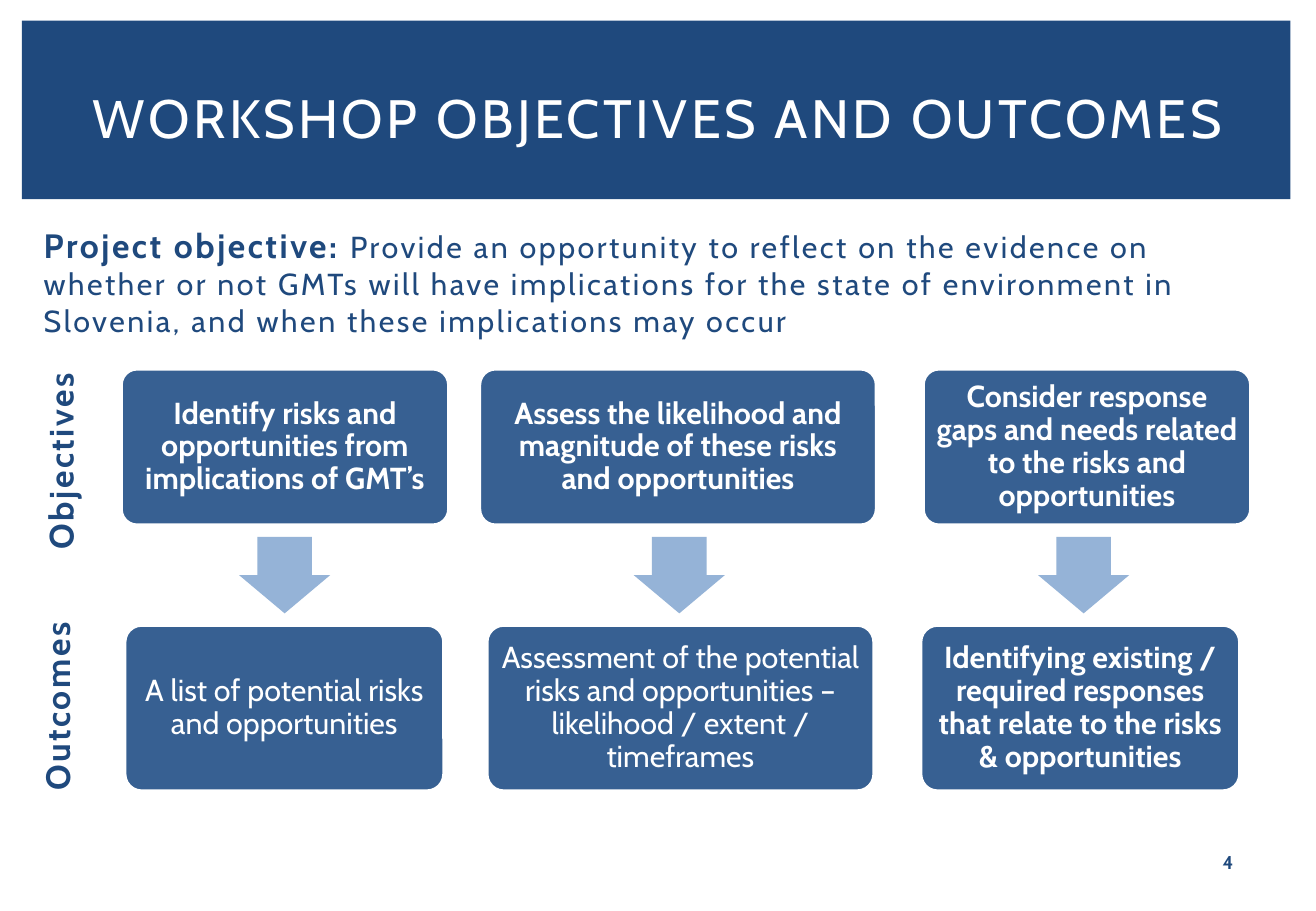
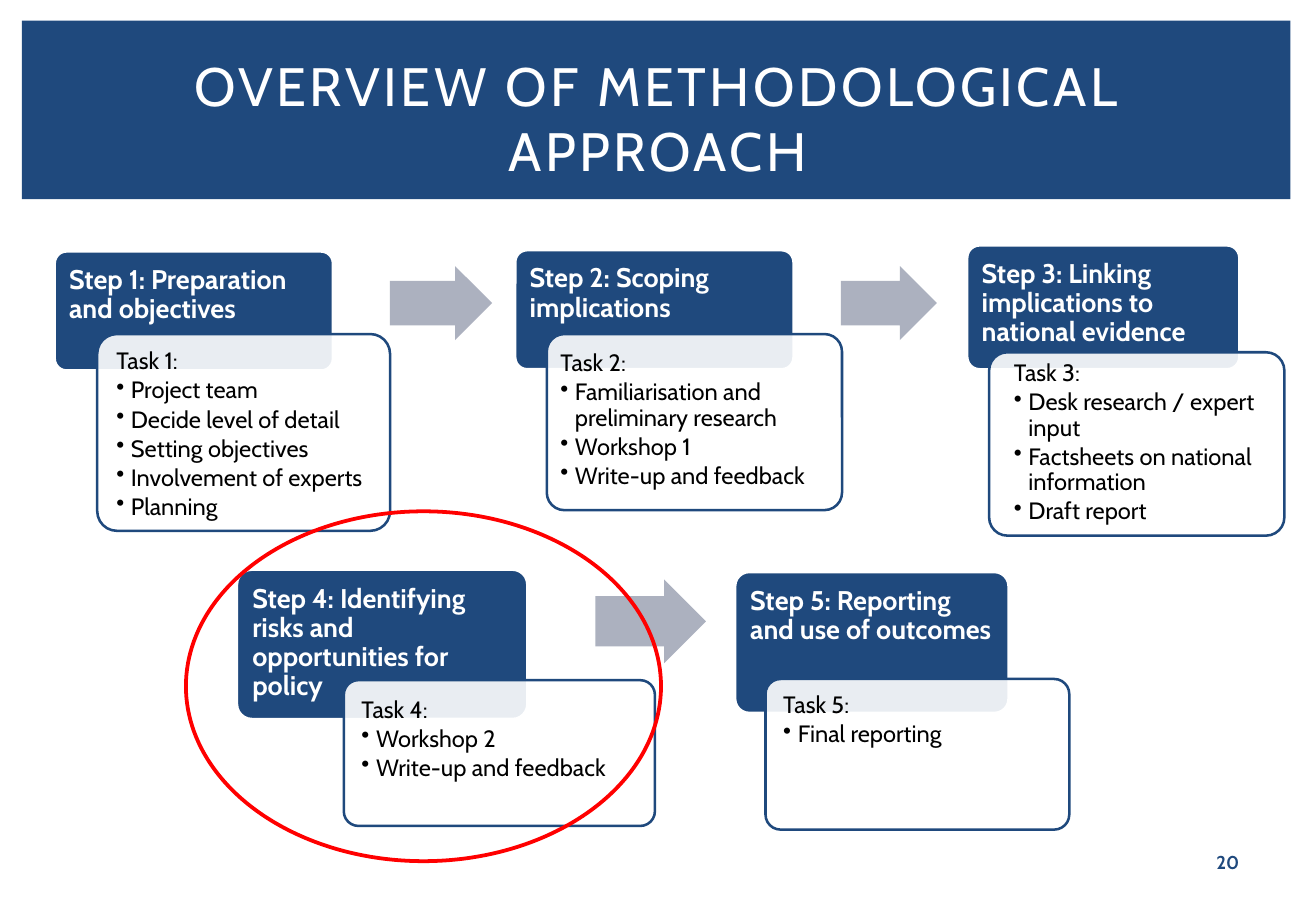
from lxml import etree
from pptx import Presentation
from pptx.dml.color import RGBColor
from pptx.enum.shapes import MSO_SHAPE
from pptx.enum.text import MSO_ANCHOR, MSO_AUTO_SIZE, PP_ALIGN
from pptx.oxml.ns import qn
from pptx.util import Inches, Pt

RECT, ROUNDED = MSO_SHAPE.RECTANGLE, MSO_SHAPE.ROUNDED_RECTANGLE
ARROW, OVAL = MSO_SHAPE.RIGHT_ARROW, MSO_SHAPE.OVAL
LEFT, CENTER = PP_ALIGN.LEFT, PP_ALIGN.CENTER
TOP, MIDDLE = MSO_ANCHOR.TOP, MSO_ANCHOR.MIDDLE

NAVY = RGBColor(0x1F, 0x49, 0x7D)
STEEL = RGBColor(0x37, 0x60, 0x92)
SKY = RGBColor(0x95, 0xB3, 0xD7)
GREY = RGBColor(0xAC, 0xB1, 0xBF)
WHITE = RGBColor(0xFF, 0xFF, 0xFF)
BLACK = RGBColor(0, 0, 0)
RED = RGBColor(0xFF, 0, 0)

FONT = "Cabin"
TITLE_STYLE = {"size": Pt(32), "color": WHITE, "spacing": 200}
LEAD_STYLE = {"size": Pt(20), "color": NAVY, "bold": True, "spacing": 150}
BODY_STYLE = {"size": Pt(18), "color": NAVY, "bold": False, "spacing": 150}
NUMBER_STYLE = {"size": Pt(11), "color": NAVY, "bold": True}
BOX_STYLE = {"size": Pt(18), "color": WHITE, "bold": False}
BOX_BOLD = {**BOX_STYLE, "bold": True}
STEP_STYLE = {"size": Pt(16), "color": WHITE, "bold": True}
TASK_STYLE = {"size": Pt(14), "color": BLACK, "bold": False}

TITLE_AREA = (0.45, 0.39, 9.93, 1.15)
BAND_AREA = (0.18, 0.17, 10.44, 1.47)
NUMBER_AREA = (9.76, 6.95, 0.69, 0.3)

# Slide 1: rows are (top, height); each column pairs (left, width) per row
OBJECTIVE_ROW, ARROW_ROW, OUTCOME_ROW = (3.04, 1.28), (4.36, 0.75), (5.15, 1.36)
ARROW_LENGTH = 0.63
COLUMNS = [
    ((1, 2.69), "Identify risks and opportunities from implications of GMT’s",
     (1.03, 2.62), "A list of potential risks and opportunities", BOX_STYLE),
    ((3.95, 3.26), "Assess the likelihood and magnitude of these risks and opportunities",
     (4.01, 3.18), "Assessment of the potential risks and opportunities – "
     "likelihood / extent / timeframes", BOX_STYLE),
    ((7.6, 2.69), "Consider response gaps and needs related to the risks and opportunities",
     (7.58, 2.62), "Identifying existing / required responses that relate to the "
     "risks & opportunities", BOX_BOLD),
]
ROW_LABELS = [("Objectives", 3.53, 1.74), ("Outcomes", 5.55, 1.68)]

# Slide 2: step area, heading, task area, text inset (left, top), task items
STEPS = [
    ((0.45, 2.07, 2.29, 0.98), "Preparation and objectives",
     (0.8, 2.75, 2.41, 1.62), (0.11, 0.08),
     ["Project team", "Decide level of detail", "Setting objectives",
      "Involvement of experts", "Planning"]),
    ((4.24, 2.06, 2.29, 0.98), "Scoping implications",
     (4.5, 2.75, 2.43, 1.45), (0.07, 0.1),
     ["Familiarisation and preliminary research", "Workshop 1", "Write-up and feedback"]),
    ((7.96, 2.02, 2.24, 1.02), "Linking implications to national evidence",
     (8.14, 2.9, 2.43, 1.51), (0.16, 0.03),
     ["Desk research / expert input", "Factsheets on national information",
      "Draft report"]),
    ((1.95, 4.69, 2.39, 1.23), "Identifying risks and opportunities for policy",
     (2.83, 5.6, 2.56, 1.2), (0.11, 0.11),
     ["Workshop 2", "Write-up and feedback"]),
    ((6.05, 4.71, 2.25, 1.16), "Reporting and use of outcomes",
     (6.3, 5.59, 2.5, 1.24), (0.11, 0.08),
     ["Final reporting"]),
]
STEP_ARROWS = [(3.21, 2.19, 0.84, 0.61), (6.92, 2.19, 0.79, 0.61), (4.9, 4.77, 0.91, 0.69)]
HIGHLIGHT_AREA = (1.53, 4.21, 3.91, 2.88)


def place(shape, area):
    for side, length in zip(("left", "top", "width", "height"), area):
        setattr(shape, side, Inches(length))


def write(paragraph, text, style):
    run = paragraph.add_run()
    run.text = text
    run.font.name = FONT
    for key, value in style.items():
        if key == "color":
            run.font.color.rgb = value
        elif key == "spacing":
            run.font._element.set("spc", str(value))
        else:
            setattr(run.font, key, value)


def set_bullet(paragraph, margin, indent, char=None):
    """Set indents in inches and a bullet character, or none."""
    properties = paragraph._p.get_or_add_pPr()
    properties.set("marL", str(Inches(margin)))
    properties.set("indent", str(Inches(indent)))
    bullet = etree.SubElement(properties, qn("a:buChar" if char else "a:buNone"))
    if char:
        bullet.set("char", char)


def set_frame(shape, anchor, insets=(0.1, 0.05, 0.1, 0.05)):
    frame = shape.text_frame
    frame.word_wrap = True
    frame.auto_size = MSO_AUTO_SIZE.NONE
    frame.vertical_anchor = anchor
    for side, inset in zip(("left", "top", "right", "bottom"), insets):
        setattr(frame, f"margin_{side}", Inches(inset))
    return frame


def add_shape(slide, kind, area, fill=None, line=None, weight=1.5, adjust=()):
    shape = slide.shapes.add_shape(kind, *map(Inches, area))
    shape.shadow.inherit = False
    for index, value in enumerate(adjust):
        shape.adjustments[index] = value
    if fill is None:
        shape.fill.background()
    else:
        shape.fill.solid()
        shape.fill.fore_color.rgb = fill
    if line is None:
        shape.line.fill.background()
    else:
        shape.line.color.rgb = line
        shape.line.width = Pt(weight)
    return shape


def add_arrow(slide, area, color, rotation=0):
    add_shape(slide, ARROW, area, color, adjust=(0.6, 0.5)).rotation = rotation


def add_card(slide, area, text, style, fill, align=CENTER, anchor=MIDDLE, inset=0.07):
    card = add_shape(slide, ROUNDED, area, fill, WHITE, adjust=(0.1,))
    paragraph = set_frame(card, anchor, (inset,) * 4).paragraphs[0]
    paragraph.alignment, paragraph.line_spacing = align, 0.9
    write(paragraph, text, style)


def add_task_card(slide, area, inset, heading, items):
    card = add_shape(slide, ROUNDED, area, WHITE, NAVY, adjust=(0.1,))
    color = card.fill._xPr.find(qn("a:solidFill"))[0]
    etree.SubElement(color, qn("a:alpha")).set("val", "90000")
    frame = set_frame(card, TOP, (*inset, 0.05, 0.05))
    for index, text in enumerate([heading, *items]):
        paragraph = frame.add_paragraph() if index else frame.paragraphs[0]
        paragraph.alignment, paragraph.line_spacing = LEFT, 0.9
        paragraph.space_after = Pt(2.1)
        if index:
            set_bullet(paragraph, 0.12, -0.12, "•")
        write(paragraph, text, TASK_STYLE)


def add_label(slide, area, text, style, align=LEFT, anchor=TOP, rotation=0):
    label = slide.shapes.add_textbox(*map(Inches, area))
    label.rotation = rotation
    paragraph = set_frame(label, anchor).paragraphs[0]
    paragraph.alignment = align
    write(paragraph, text, style)


def add_slide(prs, layout, title, number):
    slide = prs.slides.add_slide(prs.slide_layouts[layout])
    place(slide.shapes.title, TITLE_AREA)
    paragraph = set_frame(slide.shapes.title, MIDDLE).paragraphs[0]
    paragraph.alignment = CENTER
    write(paragraph, title, TITLE_STYLE)
    add_label(slide, NUMBER_AREA, number, NUMBER_STYLE, CENTER, MIDDLE)
    return slide


def move_band_to_master(prs, slide):
    """Draw the title band and put it behind everything on the slide master."""
    band = add_shape(slide, RECT, BAND_AREA, NAVY).element
    band.nvSpPr.cNvPr.set("id", "99")
    prs.slide_master.shapes.element.insert(2, band)


def build_objectives(prs):
    slide = add_slide(prs, 1, "WORKSHOP OBJECTIVES AND OUTCOMES", "4")
    move_band_to_master(prs, slide)
    body = slide.placeholders[1]
    place(body, (0.21, 1.8, 10.32, 0.61))
    paragraph = set_frame(body, TOP).paragraphs[0]
    set_bullet(paragraph, 0.05, 0)
    write(paragraph, "Project objective: ", LEAD_STYLE)
    write(paragraph, "Provide an opportunity to reflect on the evidence on whether or not "
          "GMTs will have implications for the state of environment in Slovenia, and when "
          "these implications may occur", BODY_STYLE)

    for text, top, length in ROW_LABELS:
        add_label(slide, (-0.37, top, length, 0.44), text, LEAD_STYLE, rotation=270)

    for (left, width), objective, (out_left, out_width), outcome, style in COLUMNS:
        add_card(slide, (left, OBJECTIVE_ROW[0], width, OBJECTIVE_ROW[1]),
                 objective, BOX_BOLD, STEEL)
        center = (left + width / 2 + out_left + out_width / 2) / 2
        add_arrow(slide, (center - ARROW_LENGTH / 2, ARROW_ROW[0], ARROW_LENGTH,
                          ARROW_ROW[1]), SKY, 90)
        add_card(slide, (out_left, OUTCOME_ROW[0], out_width, OUTCOME_ROW[1]),
                 outcome, style, STEEL)


def build_method(prs):
    slide = add_slide(prs, 5, "OVERVIEW OF METHODOLOGICAL APPROACH", "20")
    for number, (step_area, heading, task_area, inset, items) in enumerate(STEPS, 1):
        add_card(slide, step_area, f"Step {number}: {heading}", STEP_STYLE, NAVY,
                 LEFT, TOP, 0.09)
        add_task_card(slide, task_area, inset, f"Task {number}:", items)
    for area in STEP_ARROWS:
        add_arrow(slide, area, GREY)
    add_shape(slide, OVAL, HIGHLIGHT_AREA, line=RED, weight=2.25)


def main():
    prs = Presentation()
    prs.slide_width, prs.slide_height = Inches(10.83), Inches(7.5)
    build_objectives(prs)
    build_method(prs)
    prs.save("out.pptx")


if __name__ == "__main__":
    main()
